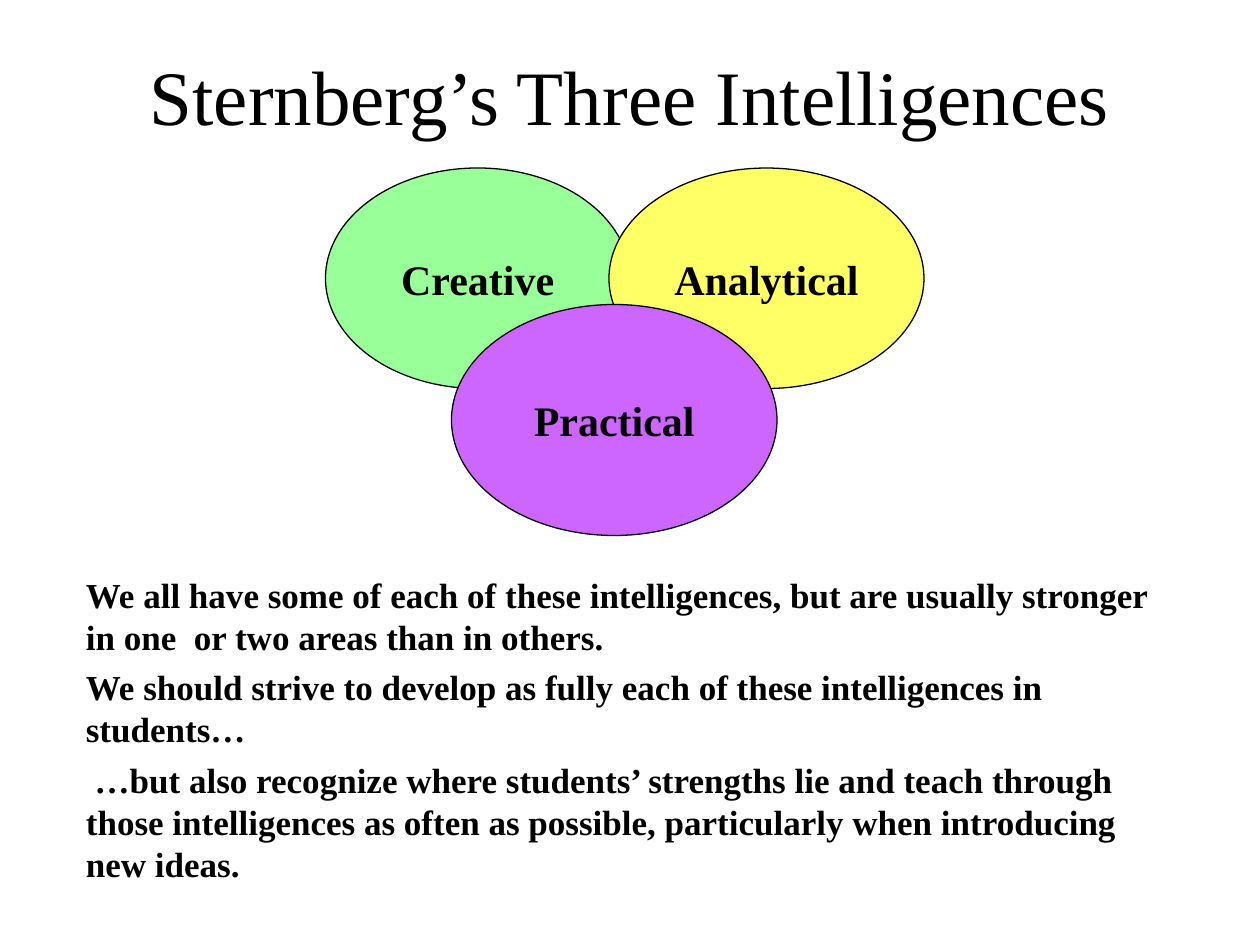
from pptx import Presentation
from pptx.dml.color import RGBColor
from pptx.enum.shapes import MSO_SHAPE
from pptx.enum.text import MSO_ANCHOR, MSO_AUTO_SIZE, PP_ALIGN
from pptx.util import Pt

SCALE = 7620
FONT = "Times New Roman"
COLORS = {
    "ink": "000000",
    "green": "99FF99",
    "yellow": "FFFF66",
    "purple": "CC66FF",
}
CIRCLES = [
    ("Creative", "green", (310, 160, 290, 210)),
    ("Analytical", "yellow", (580, 160, 300, 210)),
    ("Practical", "purple", (430, 290, 310, 220)),
]
NOTES = [
    "We all have some of each of these intelligences, but are usually stronger in one  or two areas than in others.",
    "We should strive to develop as fully each of these intelligences in students…",
    " …but also recognize where students’ strengths lie and teach through those intelligences as often as possible, particularly when introducing new ideas.",
]


def px(*sizes):
    return [size * SCALE for size in sizes]


def color(name):
    return RGBColor.from_string(COLORS[name])


def write(frame, *lines, size, bold=False, align=PP_ALIGN.LEFT,
          anchor=MSO_ANCHOR.MIDDLE, wrap=True, before=0):
    frame.word_wrap = wrap
    frame.vertical_anchor = anchor
    for index, line in enumerate(lines):
        para = frame.add_paragraph() if index else frame.paragraphs[0]
        para.alignment = align
        para.space_before = Pt(before)
        run = para.add_run()
        run.text = line
        font = run.font
        font.name, font.size, font.bold = FONT, Pt(size), bold
        font.color.rgb = color("ink")


class Deck:
    def __init__(self, wide, high):
        self.show = Presentation()
        self.show.slide_width, self.show.slide_height = px(wide, high)
        self.slide = self.show.slides.add_slide(self.show.slide_layouts[5])

    def title(self, text, box):
        shape = self.slide.shapes.title
        shape.left, shape.top, shape.width, shape.height = px(*box)
        write(shape.text_frame, text, size=44, align=PP_ALIGN.CENTER)

    def oval(self, text, fill, box):
        shape = self.slide.shapes.add_shape(MSO_SHAPE.OVAL, *px(*box))
        shape.shadow.inherit = False
        shape.fill.solid()
        shape.fill.fore_color.rgb = color(fill)
        shape.line.color.rgb = color("ink")
        shape.line.width = Pt(0.75)
        write(shape.text_frame, text, size=24, bold=True,
              align=PP_ALIGN.CENTER, wrap=False)

    def body(self, lines, box):
        frame = self.slide.shapes.add_textbox(*px(*box)).text_frame
        frame.auto_size = MSO_AUTO_SIZE.SHAPE_TO_FIT_TEXT
        write(frame, *lines, size=20, bold=True,
              anchor=MSO_ANCHOR.TOP, before=5)


def main():
    deck = Deck(1200, 900)
    deck.title("Sternberg’s Three Intelligences", (90, 40, 1020, 100))
    for text, fill, box in CIRCLES:
        deck.oval(text, fill, box)
    deck.body(NOTES, (70, 540, 1070, 312))
    deck.show.save("out.pptx")


if __name__ == "__main__":
    main()
